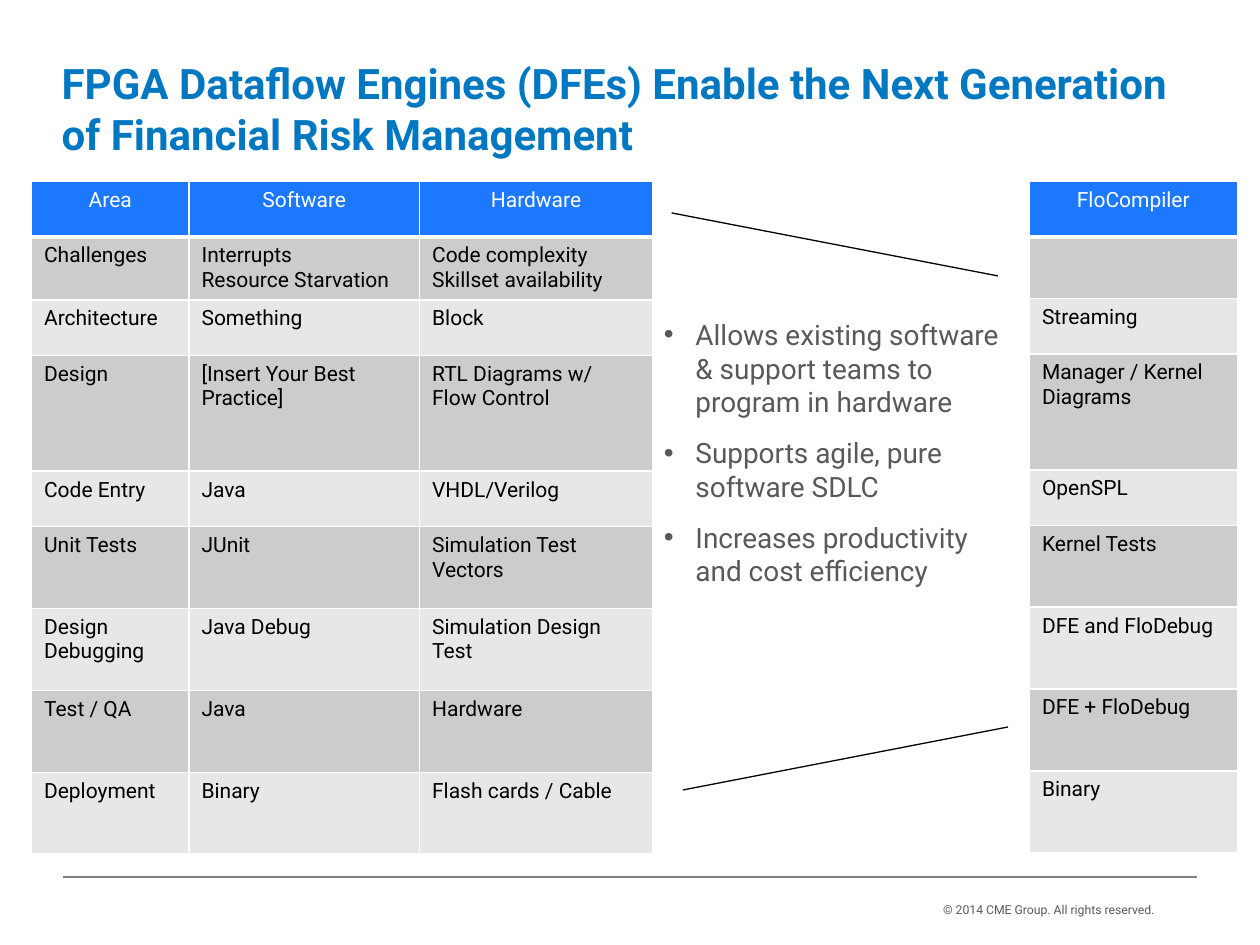
from dataclasses import dataclass

from lxml.etree import SubElement
from pptx import Presentation
from pptx.dml.color import RGBColor
from pptx.enum.shapes import MSO_CONNECTOR
from pptx.enum.text import PP_ALIGN
from pptx.oxml.ns import qn
from pptx.util import Inches, Pt


@dataclass(frozen=True)
class Theme:
    font: str = "Roboto"
    title: str = "0078C1"
    muted: str = "595959"
    header: str = "1C79FF"
    dark_band: str = "CCCCCC"
    light_band: str = "E7E7E7"
    white: str = "FFFFFF"
    black: str = "000000"
    rule: str = "808080"
    title_size: int = 24
    bullet_size: int = 16
    cell_size: int = 12
    footer_size: int = 7


theme = Theme()


def add_text(paragraph, text, size, color, bold=False):
    run = paragraph.add_run()
    run.text = text
    run.font.name = theme.font
    run.font.size = Pt(size)
    run.font.bold = bold
    run.font.color.rgb = RGBColor.from_string(color)


def add_border(cell, side, width):
    """Draw a white border on one side (L, R, T or B), before the cell's fill is set."""
    border = SubElement(cell._tc.get_or_add_tcPr(), qn(f"a:ln{side}"), w=str(Pt(width)))
    fill = SubElement(border, qn("a:solidFill"))
    SubElement(fill, qn("a:srgbClr"), val=theme.white)


prs = Presentation()
prs.slide_width, prs.slide_height = Inches(10), Inches(7.5)
slide = prs.slides.add_slide(prs.slide_layouts[6])

# Title
title = slide.shapes.add_textbox(Inches(0.49), Inches(0.46), Inches(9.04), Inches(0.8)).text_frame
title.word_wrap = True
title.margin_left = title.margin_right = title.margin_top = title.margin_bottom = 0
add_text(title.paragraphs[0],
         "FPGA Dataflow Engines (DFEs) Enable the Next Generation of Financial Risk Management",
         theme.title_size, theme.title, bold=True)

# Benefits between the two tables
benefits = slide.shapes.add_textbox(Inches(5.27), Inches(2.52), Inches(2.83), Inches(3.33)).text_frame
benefits.word_wrap = True
benefits.margin_left = benefits.margin_right = benefits.margin_top = 0
for index, benefit in enumerate([
    "Allows existing software & support teams to program in hardware",
    "Supports agile, pure software SDLC",
    "Increases productivity and cost efficiency",
]):
    paragraph = benefits.add_paragraph() if index else benefits.paragraphs[0]
    paragraph.space_before = Pt(8 if index else 0)
    paragraph.space_after = Pt(2)
    properties = paragraph._p.get_or_add_pPr()
    properties.set("marL", str(Inches(0.25)))
    properties.set("indent", str(Inches(-0.25)))
    SubElement(properties, qn("a:buFont"), typeface="Arial")
    SubElement(properties, qn("a:buChar"), char="•")
    add_text(paragraph, benefit, theme.bullet_size, theme.muted)

# Comparison tables, with rows aligned across both
row_heights = [0.44, 0.49, 0.44, 0.92, 0.44] + [0.65] * 4
comparison = [
    ["Area", "Software", "Hardware"],
    ["Challenges", "Interrupts\nResource Starvation", "Code complexity\nSkillset availability"],
    ["Architecture", "Something", "Block"],
    ["Design", "[Insert Your Best Practice]", "RTL Diagrams w/ Flow Control"],
    ["Code Entry", "Java", "VHDL/Verilog"],
    ["Unit Tests", "JUnit", "Simulation Test Vectors"],
    ["Design Debugging", "Java Debug", "Simulation Design Test"],
    ["Test / QA", "Java", "Hardware"],
    ["Deployment", "Binary", "Flash cards / Cable"],
]
compiler = [["FloCompiler"], [""], ["Streaming"], ["Manager / Kernel Diagrams"], ["OpenSPL"],
            ["Kernel Tests"], ["DFE and FloDebug"], ["DFE + FloDebug"], ["Binary"]]

for left, column_widths, rows in [
    (0.25, [1.25, 1.83, 1.85], comparison),
    (8.17, [1.65], compiler),
]:
    table = slide.shapes.add_table(
        len(rows), len(column_widths), Inches(left), Inches(1.44),
        Inches(sum(column_widths)), Inches(sum(row_heights))).table
    table.horz_banding = False
    for column, width in zip(table.columns, column_widths):
        column.width = Inches(width)
    for row_index, (height, labels) in enumerate(zip(row_heights, rows)):
        table.rows[row_index].height = Inches(height)
        is_header = row_index == 0
        band = theme.header if is_header else theme.dark_band if row_index % 2 else theme.light_band
        for column_index, label in enumerate(labels):
            cell = table.cell(row_index, column_index)
            for side in "LRTB":
                add_border(cell, side, 3 if is_header and side == "B" else 1)
            cell.fill.solid()
            cell.fill.fore_color.rgb = RGBColor.from_string(band)
            for line_index, line in enumerate(label.split("\n") if label else []):
                frame = cell.text_frame
                paragraph = frame.add_paragraph() if line_index else frame.paragraphs[0]
                paragraph.alignment = PP_ALIGN.CENTER if is_header else PP_ALIGN.LEFT
                add_text(paragraph, line, theme.cell_size, theme.white if is_header else theme.black)

# Lines leading to the compiler column, and the footer rule
for start_x, start_y, end_x, end_y, color in [
    (5.33, 1.69, 7.92, 2.19, theme.black),
    (5.42, 6.27, 8, 5.77, theme.black),
    (0.5, 6.96, 9.5, 6.96, theme.rule),
]:
    connector = slide.shapes.add_connector(
        MSO_CONNECTOR.STRAIGHT, Inches(start_x), Inches(start_y), Inches(end_x), Inches(end_y))
    connector.line.color.rgb = RGBColor.from_string(color)
    connector.line.width = Pt(0.75)
    SubElement(connector._element.spPr, qn("a:effectLst"))

# Footer
footer = slide.shapes.add_textbox(Inches(7.25), Inches(7.11), Inches(2.01), Inches(0.22)).text_frame
footer.word_wrap = False
footer.paragraphs[0].alignment = PP_ALIGN.RIGHT
add_text(footer.paragraphs[0], "© 2014 CME Group. All rights reserved.", theme.footer_size, theme.muted)

prs.save("out.pptx")
